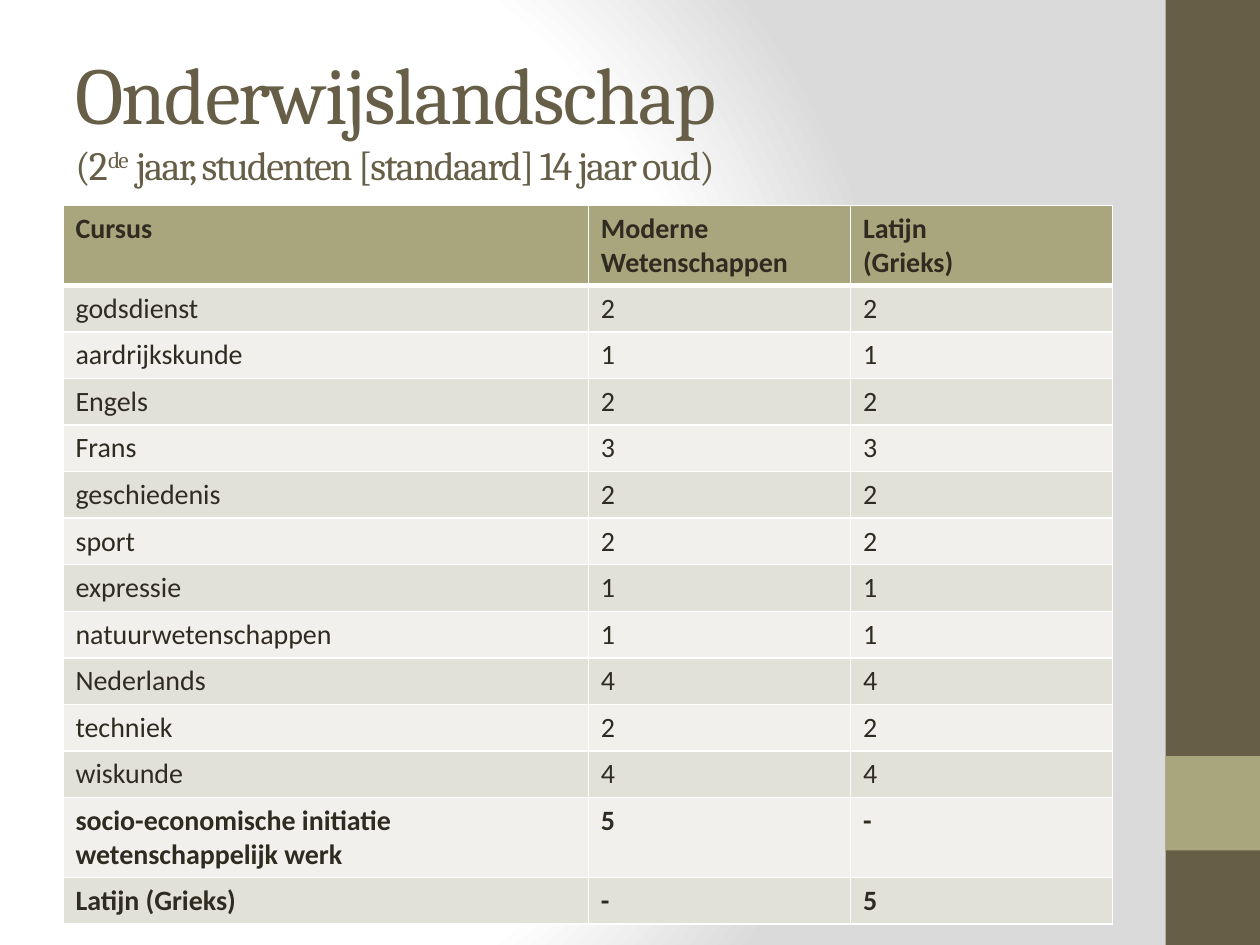
from pptx import Presentation
from pptx.dml.color import RGBColor
from pptx.enum.shapes import MSO_SHAPE
from pptx.enum.text import MSO_ANCHOR
from pptx.oxml import parse_xml
from pptx.oxml.ns import nsdecls
from pptx.util import Inches, Pt

BROWN, OLIVE, INK, WHITE = "675E47", "A9A57C", "2F2B20", "FFFFFF"
BANDS = ("E2E1D7", "F1F0EC")
BACKDROP_STOPS = [(0, WHITE), (75, WHITE), (100, "DADADA")]

# Content
TITLE = "Onderwijslandschap"
SUBTITLE = [("(2", None), ("de", 30), (" jaar, studenten [standaard] 14 jaar oud)", None)]
HEADINGS = ("Cursus", "Moderne Wetenschappen", "Latijn\n(Grieks)")
COMMON_COURSES = [
    ("godsdienst", "2", "2"),
    ("aardrijkskunde", "1", "1"),
    ("Engels", "2", "2"),
    ("Frans", "3", "3"),
    ("geschiedenis", "2", "2"),
    ("sport", "2", "2"),
    ("expressie", "1", "1"),
    ("natuurwetenschappen", "1", "1"),
    ("Nederlands", "4", "4"),
    ("techniek", "2", "2"),
    ("wiskunde", "4", "4"),
]
TRACK_COURSES = [
    ("socio-economische initiatie\nwetenschappelijk werk", "5", "-"),
    ("Latijn (Grieks)", "-", "5"),
]
COLUMN_WIDTHS = (4.17, 2.08, 2.08)
ROW_HEIGHT = 0.37
SIDEBAR = [(0, 7.5, BROWN), (6, 0.75, OLIVE)]  # top, height, colour


def rgb(hex_code):
    return RGBColor.from_string(hex_code)


def add_text(paragraph, text, *, size, font, color, bold=False, spacing=None, baseline=None):
    run = paragraph.add_run()
    run.text = text
    run.font.size = Pt(size)
    run.font.name = font
    run.font.bold = bold
    run.font.color.rgb = rgb(color)
    properties = run.font._element
    if spacing is not None:
        properties.set("spc", str(spacing * 100))
    if baseline is not None:
        properties.set("baseline", str(baseline * 1000))


def set_backdrop(slide):
    stops = "".join(
        f'<a:gs pos="{pos * 1000}"><a:srgbClr val="{color}"/></a:gs>'
        for pos, color in BACKDROP_STOPS
    )
    slide.element.cSld.insert(0, parse_xml(
        f'<p:bg {nsdecls("p", "a")}><p:bgPr><a:gradFill rotWithShape="1">'
        f'<a:gsLst>{stops}</a:gsLst><a:path path="circle">'
        '<a:fillToRect l="20000" t="50000" r="100000" b="50000"/></a:path>'
        '</a:gradFill><a:effectLst/></p:bgPr></p:bg>'
    ))


def set_borders(cell, bottom):
    properties = cell._tc.get_or_add_tcPr()
    widths = {"lnL": 1, "lnR": 1, "lnT": 1, "lnB": bottom}
    for position, (side, width) in enumerate(widths.items()):
        properties.insert(position, parse_xml(
            f'<a:{side} {nsdecls("a")} w="{Pt(width)}"><a:solidFill>'
            f'<a:srgbClr val="{WHITE}"/></a:solidFill></a:{side}>'
        ))


def fill_cell(cell, text, fill, bold, bottom=1):
    cell.fill.solid()
    cell.fill.fore_color.rgb = rgb(fill)
    set_borders(cell, bottom)
    for i, line in enumerate(text.split("\n")):
        paragraph = cell.text_frame.add_paragraph() if i else cell.text_frame.paragraphs[0]
        add_text(paragraph, line, size=16, font="Calibri", color=INK, bold=bold)


def main():
    deck = Presentation()
    deck.slide_width, deck.slide_height = Inches(10), Inches(7.5)
    slide = deck.slides.add_slide(deck.slide_layouts[6])
    set_backdrop(slide)

    # Sidebar
    for top, height, color in SIDEBAR:
        bar = slide.shapes.add_shape(
            MSO_SHAPE.RECTANGLE, Inches(9.25), Inches(top), Inches(0.75), Inches(height))
        bar.shadow.inherit = False
        bar.fill.solid()
        bar.fill.fore_color.rgb = rgb(color)
        bar.line.fill.background()

    # Title with subtitle
    heading = slide.shapes.add_textbox(Inches(0.5), Inches(0.3), Inches(8.33), Inches(1.25))
    frame = heading.text_frame
    frame.word_wrap = True
    frame.vertical_anchor = MSO_ANCHOR.MIDDLE
    paragraph = frame.paragraphs[0]
    style = {"font": "Cambria", "color": BROWN, "spacing": -1}
    add_text(paragraph, TITLE, size=46, **style)
    paragraph.add_line_break()
    for text, baseline in SUBTITLE:
        add_text(paragraph, text, size=23, baseline=baseline, **style)

    # Course table
    courses = COMMON_COURSES + TRACK_COURSES
    row_count = len(courses) + 1
    timetable = slide.shapes.add_table(
        row_count, len(HEADINGS), Inches(0.5), Inches(1.63),
        Inches(sum(COLUMN_WIDTHS)), Inches(ROW_HEIGHT * row_count)).table
    for column, width in zip(timetable.columns, COLUMN_WIDTHS):
        column.width = Inches(width)
    for cell, text in zip(timetable.rows[0].cells, HEADINGS):
        fill_cell(cell, text, OLIVE, bold=True, bottom=3)
    for i, course in enumerate(courses):
        for cell, text in zip(timetable.rows[i + 1].cells, course):
            fill_cell(cell, text, BANDS[i % 2], bold=course in TRACK_COURSES)

    deck.save("out.pptx")


if __name__ == "__main__":
    main()
